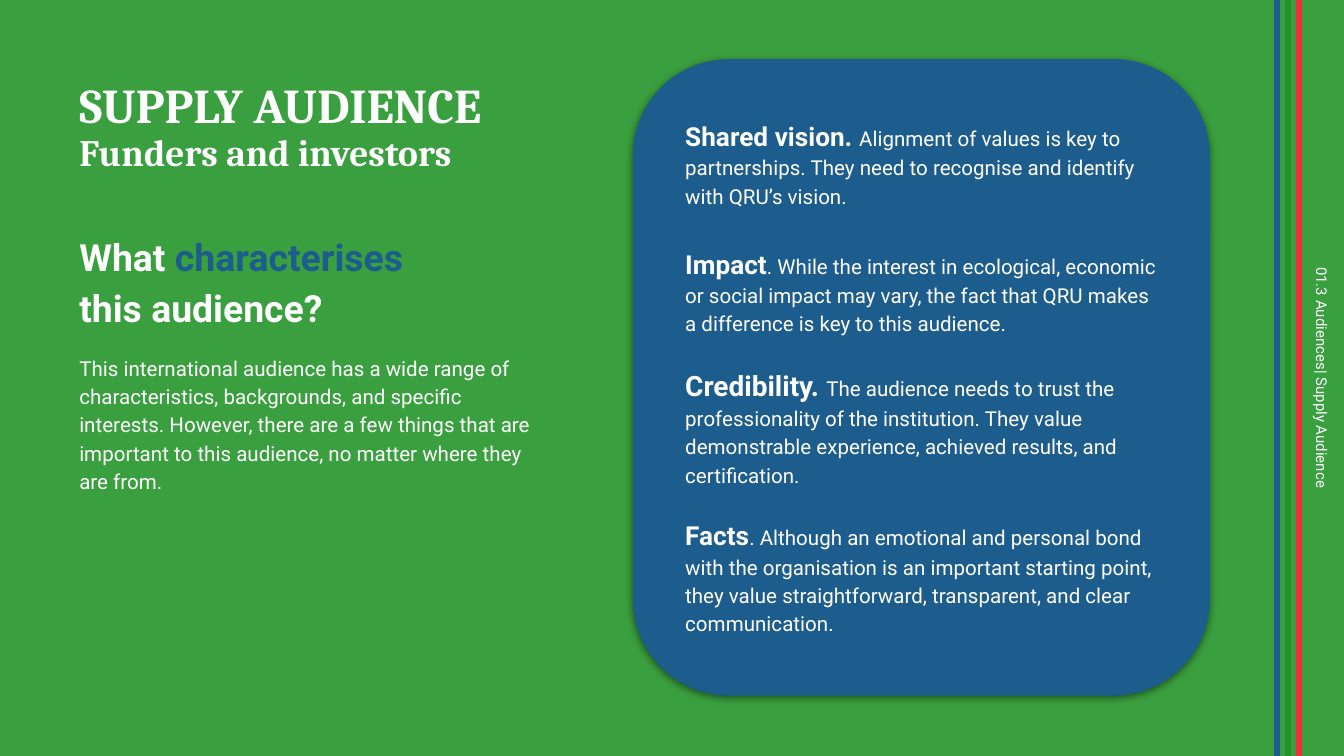
import dataclasses

import pptx
import pptx.dml.color
import pptx.enum.shapes
import pptx.enum.text
import pptx.oxml
import pptx.oxml.ns
import pptx.util

Pt = pptx.util.Pt


@dataclasses.dataclass(frozen=True)
class Theme:
    background: str = "3A9F3E"
    green: str = "249428"
    blue: str = "1D5D8D"
    red: str = "EF2E3A"
    white: str = "FFFFFF"
    shadow: str = "000000"
    serif: str = "Cambria"
    sans: str = "Roboto"
    title: float = 26
    heading: float = 20
    large_lead: float = 15
    lead: float = 14
    body: float = 11
    label: float = 8


def rgb(value):
    return pptx.dml.color.RGBColor.from_string(value)


def apply(target, values):
    for attribute, value in values.items():
        setattr(target, attribute, value)


class SlideBuilder:
    def __init__(self, slide, theme):
        self.slide = slide
        self.theme = theme

    def background(self):
        fill = self.slide.background.fill
        fill.solid()
        fill.fore_color.rgb = rgb(self.theme.background)

    def card(self, left, top, width, height, corner):
        card = self.slide.shapes.add_shape(
            pptx.enum.shapes.MSO_SHAPE.ROUNDED_RECTANGLE,
            Pt(left), Pt(top), Pt(width), Pt(height))
        card.adjustments[0] = corner
        card.fill.solid()
        card.fill.fore_color.rgb = rgb(self.theme.blue)
        card.line.fill.background()
        card.shadow.inherit = False
        effects = card.element.spPr.find(pptx.oxml.ns.qn("a:effectLst"))
        effects.append(pptx.oxml.parse_xml(
            f'<a:outerShdw {pptx.oxml.ns.nsdecls("a")} blurRad="{Pt(4.5)}" '
            f'dist="{Pt(1.5)}" dir="5400000" algn="bl" rotWithShape="0">'
            f'<a:srgbClr val="{self.theme.shadow}"><a:alpha val="50000"/></a:srgbClr>'
            '</a:outerShdw>'))

    def stripe(self, x, top, bottom, color):
        stripe = self.slide.shapes.add_connector(
            pptx.enum.shapes.MSO_CONNECTOR.STRAIGHT,
            Pt(x), Pt(top), Pt(x), Pt(bottom))
        stripe.line.color.rgb = rgb(color)
        stripe.line.width = Pt(3)
        stripe.element.spPr.append(pptx.oxml.parse_xml(
            f'<a:effectLst {pptx.oxml.ns.nsdecls("a")}/>'))

    def text(self, left, top, width, height, paragraphs, font=None, rotation=0):
        """Each paragraph is (format dict, [(words, size, bold, color), ...])."""
        box = self.slide.shapes.add_textbox(Pt(left), Pt(top), Pt(width), Pt(height))
        box.rotation = rotation
        frame = box.text_frame
        margins = ("margin_left", "margin_top", "margin_right", "margin_bottom")
        apply(frame, {
            "word_wrap": True,
            "auto_size": pptx.enum.text.MSO_AUTO_SIZE.SHAPE_TO_FIT_TEXT,
            **dict.fromkeys(margins, Pt(7.2)),
        })
        for index, (layout, pieces) in enumerate(paragraphs):
            paragraph = frame.add_paragraph() if index else frame.paragraphs[0]
            apply(paragraph, {"line_spacing": 1.15, **layout})
            for words, size, bold, color in pieces:
                run = paragraph.add_run()
                run.text = words
                apply(run.font, {"name": font or self.theme.sans,
                                 "size": Pt(size), "bold": bold})
                run.font.color.rgb = rgb(color)


def main():
    presentation = pptx.Presentation()
    apply(presentation, {"slide_width": Pt(720), "slide_height": Pt(405)})
    theme = Theme()
    white = theme.white
    builder = SlideBuilder(
        presentation.slides.add_slide(presentation.slide_layouts[6]), theme)
    builder.background()
    builder.card(339.1, 31.7, 309, 341, 0.167)

    margin = 35.4
    tight = {"line_spacing": 0.9}
    builder.text(margin, 36.7, 320.4, 64.8, [
        (tight, [("SUPPLY AUDIENCE", theme.title, True, white)]),
        (tight, [("Funders and investors", theme.heading, True, white)]),
    ], font=theme.serif)

    for index, color in enumerate((theme.blue, theme.green, theme.red)):
        builder.stripe(684 + 6 * index, -16, 416, color)

    builder.text(margin, 114.5, 203, 67, [({}, [
        ("What ", theme.heading, True, white),
        ("characterises", theme.heading, True, theme.blue),
        (" this audience?", theme.heading, True, white),
    ])])

    section_layout = {"alignment": pptx.enum.text.PP_ALIGN.CENTER,
                      "space_before": Pt(16), "space_after": Pt(4)}
    builder.text(555.1, 190.1, 305.3, 24.5, [(section_layout, [
        ("01.3 Audiences| Supply Audience", theme.label, False, white),
    ])], rotation=90)

    # Gap above, lead size, lead words, explanation
    traits = [
        (0, theme.lead, "Shared vision. ",
         "Alignment of values is key to partnerships. They need to recognise "
         "and identify with QRU’s vision."),
        (18.9, theme.lead, "Impact",
         ". While the interest in ecological, economic or social impact may vary, "
         "the fact that QRU makes a difference is key to this audience."),
        (14.8, theme.large_lead, "Credibility. ",
         "The audience needs to trust the professionality of the institution. They "
         "value demonstrable experience, achieved results, and certification."),
        (14.8, theme.lead, "Facts",
         ". Although an emotional and personal bond with the organisation is an "
         "important starting point, they value straightforward, transparent, and "
         "clear communication."),
    ]
    builder.text(360, 54.7, 267.8, 295.2, [
        ({"space_before": Pt(gap)}, [(lead, size, True, white),
                                     (explanation, theme.body, False, white)])
        for gap, size, lead, explanation in traits
    ])

    builder.text(margin, 181.4, 256.3, 89.3, [({}, [(
        "This international audience has a wide range of characteristics, "
        "backgrounds, and specific interests. However, there are a few things that "
        "are important to this audience, no matter where they are from.",
        theme.body, False, white)])])

    presentation.save("out.pptx")


if __name__ == "__main__":
    main()
